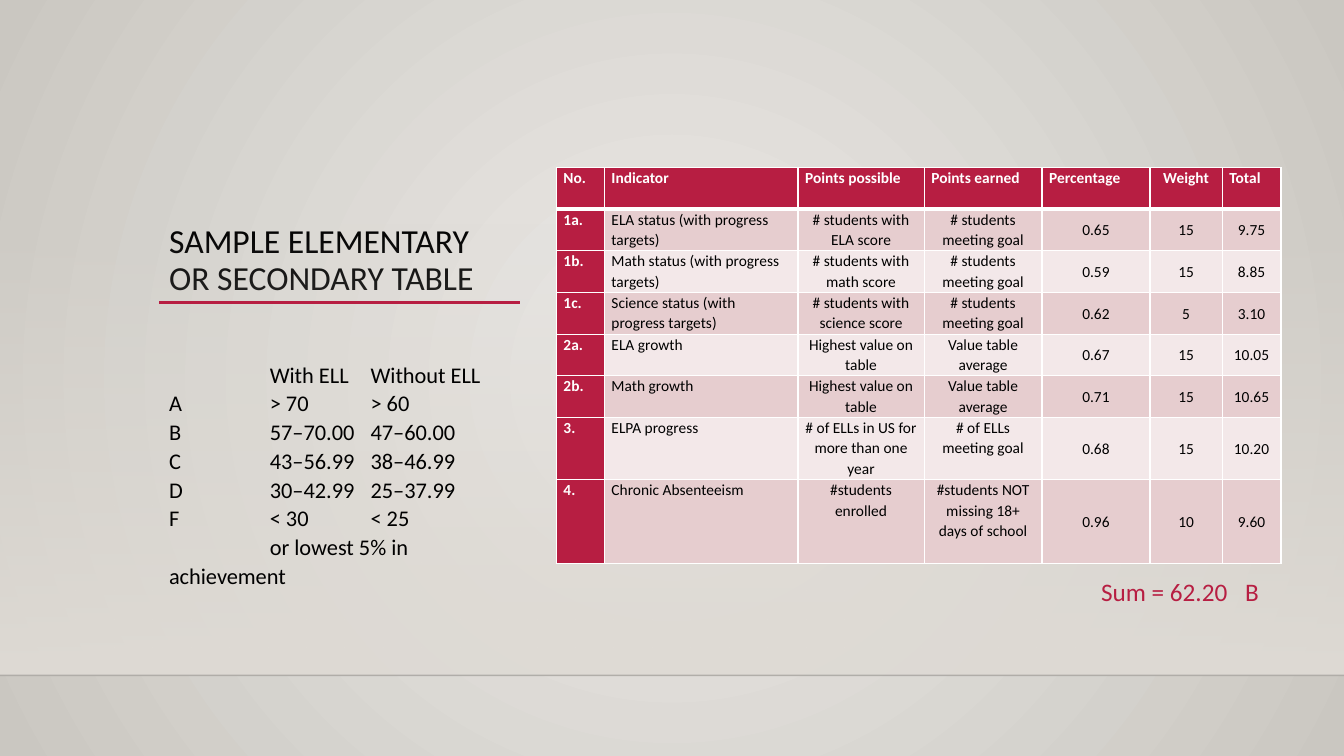
from dataclasses import dataclass

from pptx import Presentation
from pptx.dml.color import RGBColor
from pptx.enum.shapes import MSO_CONNECTOR, MSO_SHAPE
from pptx.enum.text import MSO_ANCHOR as Anchor, PP_ALIGN as Align
from pptx.oxml import parse_xml
from pptx.oxml.ns import nsdecls
from pptx.oxml.xmlchemy import OxmlElement
from pptx.util import Cm, Pt


@dataclass(frozen=True)
class Theme:
    font: str = "Calibri"
    accent: str = "B71E42"
    ink: str = "000000"
    white: str = "FFFFFF"
    band_dark: str = "E6CDCF"
    band_light: str = "F3E8E9"
    glow: str = "ECEAE7"
    edge: str = "CAC7C1"
    floor: str = "DFDBD5"
    title_size: int = 24
    sum_size: int = 18
    grade_size: int = 16
    table_size: int = 11


THEME = Theme()
LINE_SPACING = 1.07

GRADES = [
    "\tWith ELL\tWithout ELL",
    "A\t> 70\t> 60",
    "B\t57–70.00\t47–60.00",
    "C\t43–56.99\t38–46.99",
    "D\t30–42.99\t25–37.99",
    "F\t< 30\t< 25",
    "\tor lowest 5% in achievement",
]

HEADINGS = ["No.", "Indicator", "Points possible", "Points earned", "Percentage", "Weight", "Total"]
INDICATORS = [
    ["1a.", "ELA status (with progress targets)", "# students with ELA score",
     "# students meeting goal", "0.65", "15", "9.75"],
    ["1b.", "Math status (with progress targets)", "# students with math score",
     "# students meeting goal", "0.59", "15", "8.85"],
    ["1c.", "Science status (with progress targets)", "# students with science score",
     "# students meeting goal", "0.62", "5", "3.10"],
    ["2a.", "ELA growth", "Highest value on table", "Value table average", "0.67", "15", "10.05"],
    ["2b.", "Math growth", "Highest value on table", "Value table average", "0.71", "15", "10.65"],
    ["3.", "ELPA progress", "# of ELLs in US for more than one year",
     "# of ELLs meeting goal", "0.68", "15", "10.20"],
    ["4.", "Chronic Absenteeism", "#students enrolled",
     "#students NOT missing 18+ days of school", "0.96", "10", "9.60"],
]
COLUMN_WIDTHS = [1.21, 4.88, 3.18, 2.97, 2.72, 1.82, 1.48]
ROW_HEIGHTS = [1.05] * 6 + [1.57, 2.1]
WEIGHT_COLUMN = HEADINGS.index("Weight")
FIRST_NUMBER_COLUMN = HEADINGS.index("Percentage")


def gradient(start, end, direction, start_alpha=100):
    return parse_xml(
        f'<a:gradFill {nsdecls("a")} rotWithShape="1"><a:gsLst>'
        f'<a:gs pos="0"><a:srgbClr val="{start}"><a:alpha val="{start_alpha * 1000}"/></a:srgbClr></a:gs>'
        f'<a:gs pos="100000"><a:srgbClr val="{end}"/></a:gs>'
        f'</a:gsLst>{direction}</a:gradFill>')


def replace_fill(properties, fill):
    """Swap the gradient that python-pptx placed for a custom one."""
    old = next(child for child in properties if child.tag.endswith("}gradFill"))
    properties.replace(old, fill)


def paint_background(page):
    page.background.fill.gradient()
    properties = page.background.fill._xPr
    circle = ('<a:path path="circle"><a:fillToRect l="50000" t="50000" r="50000" b="50000"/></a:path>')
    replace_fill(properties, gradient(THEME.glow, THEME.edge, circle))


def add_floor_shade(page, width):
    shade = page.shapes.add_shape(MSO_SHAPE.RECTANGLE, 0, Cm(5.61), width, Cm(11.41))
    shade.shadow.inherit = False
    shade.line.fill.background()
    shade.fill.gradient()
    downward = '<a:lin ang="5400000" scaled="0"/>'
    replace_fill(shade._element.spPr, gradient(THEME.floor, THEME.floor, downward, 0))


def add_rule(page, left, right, top, color, weight, opacity=100):
    rule = page.shapes.add_connector(MSO_CONNECTOR.STRAIGHT, left, top, right, top)
    rule.line.color.rgb = RGBColor.from_string(color)
    rule.line.width = Pt(weight)
    if opacity < 100:
        alpha = OxmlElement("a:alpha")
        alpha.set("val", str(opacity * 1000))
        rule.line.fill._xPr.find(".//{*}srgbClr").append(alpha)
    rule._element.spPr.append(OxmlElement("a:effectLst"))


def style_para(para, size, color, bold=False, align=Align.LEFT, spacing=LINE_SPACING):
    para.alignment = align
    para.line_spacing = spacing
    para.space_before = para.space_after = Pt(0)
    for span in para.runs:
        span.font.name = THEME.font
        span.font.size = Pt(size)
        span.font.bold = bold
        span.font.color.rgb = RGBColor.from_string(color)


def set_tabs(para, stops):
    tab_list = OxmlElement("a:tabLst")
    for stop in stops:
        tab = OxmlElement("a:tab")
        tab.set("pos", str(Cm(stop)))
        tab.set("algn", "l")
        tab_list.append(tab)
    para._p.get_or_add_pPr().append(tab_list)


def set_title(page, text):
    title = page.shapes.title
    title.left, title.top, title.width, title.height = Cm(4.01), Cm(2.21), Cm(9.09), Cm(5.41)
    frame = title.text_frame
    frame.text = text
    frame.word_wrap = True
    frame.vertical_anchor = Anchor.BOTTOM
    style_para(frame.paragraphs[0], THEME.title_size, THEME.ink, spacing=0.9)


def add_tabbed_text(page, place, lines, stops, size, color, spacing=LINE_SPACING):
    box = page.shapes.add_textbox(*map(Cm, place))
    frame = box.text_frame
    frame.word_wrap = True
    frame.text = "\n".join(lines)
    for para in frame.paragraphs:
        style_para(para, size, color, spacing=spacing)
        set_tabs(para, stops)


def set_borders(cell, top, bottom):
    weights = {"L": 1, "R": 1, "T": top, "B": bottom}
    properties = cell._tc.get_or_add_tcPr()
    for index, (side, weight) in enumerate(weights.items()):
        properties.insert(index, parse_xml(
            f'<a:ln{side} {nsdecls("a")} w="{Pt(weight)}"><a:solidFill>'
            f'<a:srgbClr val="{THEME.white}"/></a:solidFill></a:ln{side}>'))


def style_cell(cell, row, column):
    strong = row == 0 or column == 0
    if row == 0:
        centered = column == WEIGHT_COLUMN
    else:
        centered = column > 1
    fill = THEME.accent if strong else (THEME.band_light, THEME.band_dark)[row % 2]
    cell.fill.solid()
    cell.fill.fore_color.rgb = RGBColor.from_string(fill)
    cell.margin_left = cell.margin_right = Cm(0.18)
    cell.margin_top = cell.margin_bottom = 0
    numeric = row > 0 and column >= FIRST_NUMBER_COLUMN
    cell.vertical_anchor = Anchor.MIDDLE if numeric else Anchor.TOP
    set_borders(cell, top=3 if row == 1 else 1, bottom=3 if row == 0 else 1)
    style_para(cell.text_frame.paragraphs[0], THEME.table_size,
               THEME.white if strong else THEME.ink, strong,
               Align.CENTER if centered else Align.LEFT)


def add_indicator_table(page):
    rows = [HEADINGS, *INDICATORS]
    table = page.shapes.add_table(
        len(rows), len(HEADINGS), Cm(14.02), Cm(4.22),
        Cm(sum(COLUMN_WIDTHS)), Cm(sum(ROW_HEIGHTS))).table
    for column, width in zip(table.columns, COLUMN_WIDTHS):
        column.width = Cm(width)
    for row, height in zip(table.rows, ROW_HEIGHTS):
        row.height = Cm(height)
    for row, texts in enumerate(rows):
        for column, text in enumerate(texts):
            cell = table.cell(row, column)
            cell.text = text
            style_cell(cell, row, column)


def main():
    deck = Presentation()
    deck.slide_width, deck.slide_height = Cm(33.87), Cm(19.05)
    page = deck.slides.add_slide(deck.slide_layouts[5])
    paint_background(page)
    add_floor_shade(page, deck.slide_width)
    add_rule(page, 0, deck.slide_width, Cm(17.02), THEME.ink, 1, opacity=20)
    add_rule(page, Cm(4.01), Cm(13.11), Cm(7.62), THEME.accent, 2.5)
    set_title(page, "SAMPLE ELEMENTARY OR SECONDARY TABLE")
    add_tabbed_text(page, (4.01, 8.92, 9.53, 6.25), GRADES, (2.54, 5.08), THEME.grade_size, THEME.ink)
    add_tabbed_text(page, (27.5, 14.4, 4.67, 1.03), ["Sum = 62.20\tB"], (3.63,),
                    THEME.sum_size, THEME.accent, spacing=1.0)
    add_indicator_table(page)
    deck.save("out.pptx")


if __name__ == "__main__":
    main()
